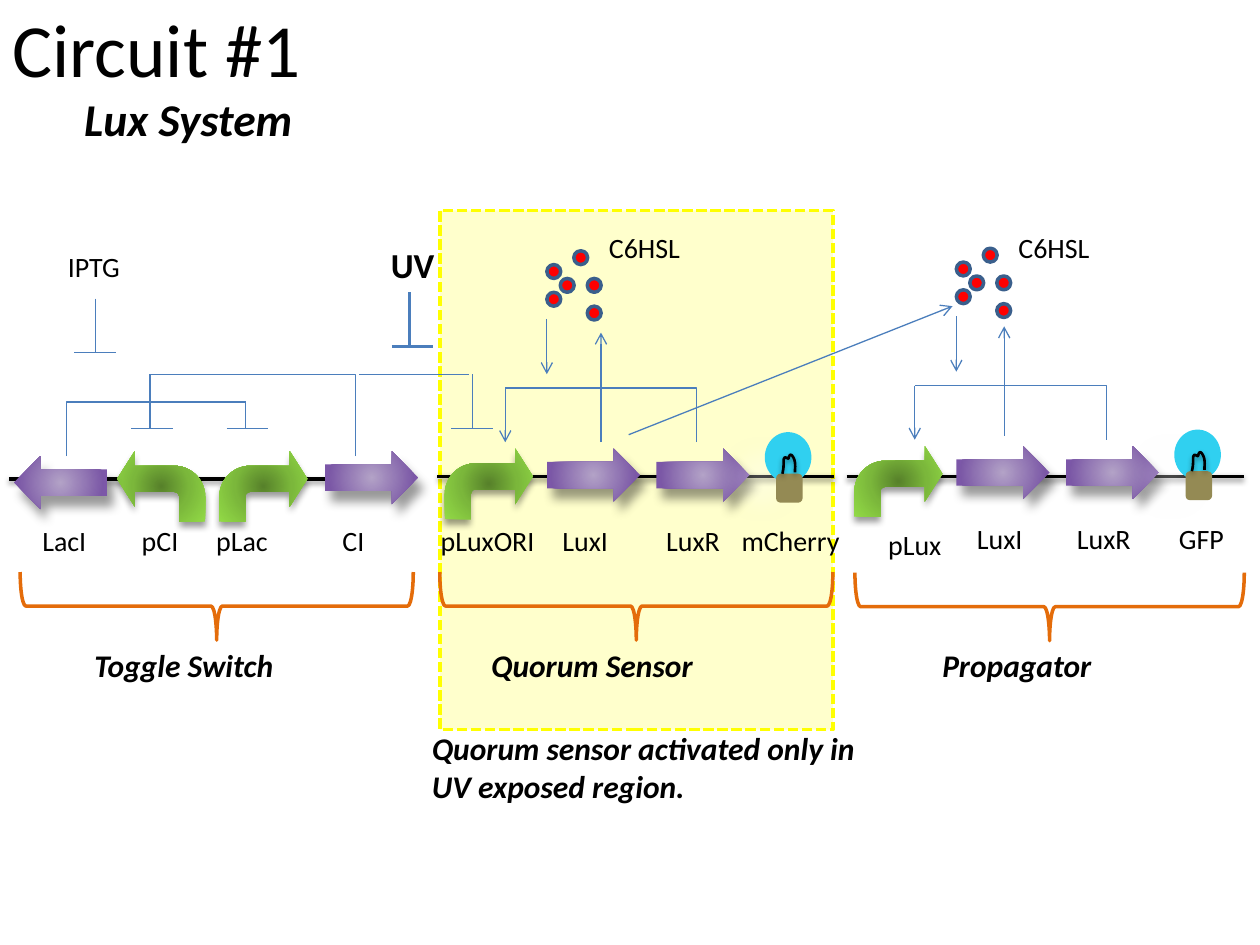
from lxml.etree import SubElement
from pptx import Presentation
from pptx.dml.color import RGBColor
from pptx.enum.dml import MSO_LINE
from pptx.enum.shapes import MSO_CONNECTOR, MSO_SHAPE
from pptx.enum.text import MSO_ANCHOR, MSO_AUTO_SIZE, PP_ALIGN
from pptx.oxml.ns import qn
from pptx.util import Inches, Pt

BLACK, BLUE = "000000", "4B7EBC"
GREEN = [(0, "57812A"), (50, "7BB73B"), (100, "92DA46")]
PURPLE = [(0, "B3A2C7"), (80, "7B58A6"), (100, "7C57A8")]
# Shadows: colour, opacity in percent, blur and distance in points, angle
LINE_SHADOW = (BLACK, 38, 3.1, 1.6, 90)
PROMOTER_SHADOW = (BLACK, 40, 4, 3, 90)
GENE_SHADOW = (BLACK, 40, 6, 7, 60)
GLOW = ("FFFFFF", 28, 11.8, 19.7, 141)
HEADING = {"size": Pt(18), "bold": True, "italic": True}


def color(value):
    return RGBColor.from_string(value)


def add_node(parent, tag, **values):
    return SubElement(parent, qn(tag), {k: str(v) for k, v in values.items()})


def add_color(parent, value, opacity=100):
    node = add_node(parent, "a:srgbClr", val=value)
    if opacity < 100:
        add_node(node, "a:alpha", val=opacity * 1000)


class CircuitSlide:
    def __init__(self, slide):
        self.slide = slide
        self.shapes = slide.shapes

    def format_text(self, shape, text, align, **values):
        frame = shape.text_frame
        frame.word_wrap = True
        frame.text = text
        paragraph = frame.paragraphs[0]
        paragraph.alignment = align
        style = {"name": "Calibri", "size": Pt(16), **values}
        for name, value in style.items():
            setattr(paragraph.font, name, value)
        paragraph.font.color.rgb = color(BLACK)
        return frame

    def title(self, text, left, top, width, height):
        shape = self.slide.shapes.title
        place = {"left": left, "top": top, "width": width, "height": height}
        for name, value in place.items():
            setattr(shape, name, Inches(value))
        frame = self.format_text(shape, text, PP_ALIGN.LEFT, size=Pt(42.9))
        frame.auto_size = MSO_AUTO_SIZE.NONE
        frame.vertical_anchor = MSO_ANCHOR.MIDDLE

    def text(self, text, left, top, width, height=0.37, align=PP_ALIGN.CENTER, **values):
        box = self.shapes.add_textbox(*map(Inches, (left, top, width, height)))
        frame = self.format_text(box, text, align, **values)
        frame.auto_size = MSO_AUTO_SIZE.SHAPE_TO_FIT_TEXT

    def shadow(self, properties, values=None):
        effects = properties.find(qn("a:effectLst"))
        if effects is None:
            effects = add_node(properties, "a:effectLst")
        if values:
            tint, opacity, blur, distance, angle = values
            node = add_node(effects, "a:outerShdw", blurRad=Pt(blur), dist=Pt(distance),
                            dir=angle * 60000, rotWithShape=0)
            add_color(node, tint, opacity)

    def finish(self, shape, fill=None, line=None, width=2, shadow=None):
        shape.shadow.inherit = False
        if fill:
            shape.fill.solid()
            shape.fill.fore_color.rgb = color(fill)
        else:
            shape.fill.background()
        if line:
            shape.line.color.rgb = color(line)
            shape.line.width = Pt(width)
        else:
            shape.line.fill.background()
        self.shadow(shape._element.spPr, shadow)
        return shape

    def shape(self, kind, left, top, width, height, **style):
        shape = self.shapes.add_shape(kind, *map(Inches, (left, top, width, height)))
        return self.finish(shape, **style)

    def radial(self, shape, stops):
        properties = shape._element.spPr
        gradient = add_node(properties, "a:gradFill", rotWithShape=1)
        stop_list = add_node(gradient, "a:gsLst")
        for position, value in stops:
            add_color(add_node(stop_list, "a:gs", pos=position * 1000), value)
        circle = add_node(gradient, "a:path", path="circle")
        add_node(circle, "a:fillToRect", l=50000, t=50000, r=50000, b=50000)
        properties.replace(properties.find(qn("a:noFill")), gradient)

    def line(self, x1, y1, x2, y2, tint=BLUE, width=0.75, arrow=False, elbow=False, shadow=None):
        kind = MSO_CONNECTOR.ELBOW if elbow else MSO_CONNECTOR.STRAIGHT
        connector = self.shapes.add_connector(kind, *map(Inches, (x1, y1, x2, y2)))
        connector.line.color.rgb = color(tint)
        connector.line.width = Pt(width)
        properties = connector._element.spPr
        if arrow:
            add_node(properties.find(qn("a:ln")), "a:tailEnd", type="arrow")
        if elbow:  # turn right at the start
            guides = properties.find(qn("a:prstGeom")).find(qn("a:avLst"))
            add_node(guides, "a:gd", name="adj1", fmla="val 0")
        self.shadow(properties, shadow)

    def strand(self, left, right, y):
        self.line(left, y, right, y, BLACK, 2, shadow=LINE_SHADOW)

    def inhibitor(self, x, top, bottom, bar_left, width=0.75):
        self.line(x, top, x, bottom, width=width)
        self.line(bar_left, bottom, bar_left + 0.33, bottom, width=width)

    def promoter(self, left, top, mirrored=False):
        shape = self.shape(MSO_SHAPE.BENT_ARROW, left, top, 0.7, 0.56, shadow=PROMOTER_SHADOW)
        for index, value in enumerate((0.37, 0.394, 0.25, 0.438)):
            shape.adjustments[index] = value
        self.radial(shape, GREEN)
        if mirrored:
            shape._element.spPr.find(qn("a:xfrm")).set("flipH", "1")

    def gene(self, left, top, rotation=270):
        shape = self.shape(MSO_SHAPE.DOWN_ARROW, left, top, 0.42, 0.74, shadow=GENE_SHADOW)
        shape.rotation = rotation
        self.radial(shape, PURPLE)

    def brace(self, left, top, length):
        shape = self.shape(MSO_SHAPE.LEFT_BRACE, left, top, 0.54, length, line="E46C0A")
        shape.rotation = 270

    def reporter(self, left, top):
        self.shapes = self.slide.shapes.add_group_shape().shapes
        self.shape(MSO_SHAPE.OVAL, left, top, 0.37, 0.4, fill="30D0F0", shadow=GLOW)
        self.shape(MSO_SHAPE.ROUNDED_RECTANGLE, left + 0.09, top + 0.33, 0.21, 0.23, fill="948A54")
        # Filament: Bezier segments in hundredths of an inch, sampled
        curve = [(14, 33), (15, 29), (15, 26), (15, 23), (15, 22), (15, 21), (16, 20),
                 (17, 20), (18, 21), (19, 21), (19, 20), (20, 16), (22, 19),
                 (25, 23), (24, 28), (24, 32)]
        points = []
        for start in range(0, len(curve) - 1, 3):
            for t in (step / 8 for step in range(1, 9)):
                weights = ((1 - t) ** 3, 3 * t * (1 - t) ** 2, 3 * t * t * (1 - t), t ** 3)
                segment = list(zip(weights, curve[start:start + 4]))
                points.append((Inches(left + sum(w * p[0] for w, p in segment) / 100),
                               Inches(top + sum(w * p[1] for w, p in segment) / 100)))
        builder = self.shapes.build_freeform(Inches(left + 0.14), Inches(top + 0.33))
        builder.add_line_segments(points, close=False)
        self.finish(builder.convert_to_shape(), line=BLACK, width=1.5, shadow=LINE_SHADOW)
        self.shapes = self.slide.shapes

    def molecules(self, left, top):
        self.shapes = self.slide.shapes.add_group_shape().shapes
        for column, row in ((1, 2), (3, 4), (3, 2), (2, 0), (0, 1), (0, 3)):
            self.shape(MSO_SHAPE.OVAL, left + column * 0.107, top + row * 0.11, 0.11, 0.11,
                       fill="FF0000", line="3A5F8C")
        self.shapes = self.slide.shapes

    def lux_module(self, x, y, signal_x, signal_y, labels):
        """Lux genes with their signal; x and y shift the whole module."""
        self.strand(3.47 + x, 6.62 + x, 3.78)
        self.promoter(3.53 + x, 3.56 + y)
        for left in (4.5, 5.37):
            self.gene(left + x, 3.4 + y)
        self.reporter(6.07 + x, 3.43 + y)
        self.line(5.53 + x, 3.51 + y, 4.01 + x, 3.08 + y, elbow=True)
        self.line(4.01 + x, 3.08 + y, 4.01 + x, 3.51 + y, arrow=True)
        self.molecules(4.34 + x, 1.99 + y)
        self.line(4.34 + x, 2.53 + y, 4.34 + x, 2.97 + y, arrow=True)
        self.line(signal_x, signal_y, signal_x, signal_y - 0.87, arrow=True)
        self.text("C6HSL", 4.48 + x, 1.78, 1.27)
        for label in labels:
            self.text(*label)


def main():
    presentation = Presentation()
    presentation.slide_width, presentation.slide_height = Inches(10), Inches(7.5)
    circuit = CircuitSlide(presentation.slides.add_slide(presentation.slide_layouts[5]))
    circuit.title("Circuit #1", 0, -0.25, 9, 1.25)
    circuit.text("Lux System", 0.57, 0.67, 2.08, 0.54, PP_ALIGN.LEFT, **{**HEADING, "size": Pt(26)})

    # UV exposed region
    region = circuit.shape(MSO_SHAPE.RECTANGLE, 3.49, 1.67, 3.12, 4.12, fill="FFFF00", line="FFFF00")
    region.line.dash_style = MSO_LINE.SQUARE_DOT
    fill_color = region._element.spPr.find(qn("a:solidFill"))[0]
    add_node(fill_color, "a:alpha", val=20000)

    # Toggle switch
    circuit.strand(0.07, 3.21, 3.8)
    circuit.promoter(0.93, 3.58, mirrored=True)
    circuit.promoter(1.74, 3.58)
    circuit.gene(0.27, 3.46, rotation=90)
    circuit.gene(2.74, 3.42)
    for label, left, width in (("LacI", 0, 1.02), ("pCI", 0.76, 1.02),
                               ("pLac", 1.41, 1.02), ("CI", 2.17, 1.27)):
        circuit.text(label, left, 4.11, width)

    # Repression between the switch and the sensor
    circuit.line(2.82, 3.62, 1.19, 2.97, elbow=True)
    circuit.line(0.53, 3.62, 1.95, 3.19, elbow=True)
    circuit.line(2.85, 2.97, 3.72, 2.97)
    for x, top, bottom, bar_left, width in (
            (1.19, 2.97, 3.4, 1.04, 0.75), (1.95, 3.19, 3.4, 1.8, 0.75),
            (3.75, 2.97, 3.4, 3.58, 0.75), (0.76, 2.37, 2.8, 0.59, 0.75),
            (3.25, 2.32, 2.75, 3.11, 1.5)):
        circuit.inhibitor(x, top, bottom, bar_left, width)
    circuit.text("IPTG", 0.11, 1.93, 1.27)
    circuit.text("UV", 2.64, 1.88, 1.27, 0.44, size=Pt(20), bold=True)

    # Quorum sensor and propagator
    circuit.lux_module(0, 0, 4.77, 3.51, [
        ("pLuxORI", 3.36, 4.11, 1.02), ("LuxI", 4.01, 4.11, 1.27),
        ("LuxR", 4.99, 4.11, 1.02), ("mCherry", 5.64, 4.11, 1.27)])
    circuit.lux_module(3.25, -0.02, 7.97, 3.46, [
        ("pLux", 6.75, 4.14, 1.02), ("LuxI", 7.3, 4.09, 1.27),
        ("LuxR", 8.25, 4.09, 1.02), ("GFP", 8.9, 4.09, 1.27)])
    circuit.line(4.99, 3.45, 7.56, 2.43, arrow=True)

    # Braces and part names
    for name, left, brace_left, brace_top, length in (
            ("Toggle Switch", 0.65, 1.45, 3.25, 3.12),
            ("Quorum Sensor", 3.8, 4.78, 3.25, 3.12),
            ("Propagator", 7.38, 8.06, 3.27, 3.09)):
        circuit.brace(brace_left, brace_top, length)
        circuit.text(name, left, 5.08, 2.71, 0.54, PP_ALIGN.LEFT, **HEADING)
    circuit.text("Quorum sensor activated only in UV exposed region.",
                 3.33, 5.74, 3.8, 0.71, PP_ALIGN.LEFT, **HEADING)

    presentation.save("out.pptx")


if __name__ == "__main__":
    main()
